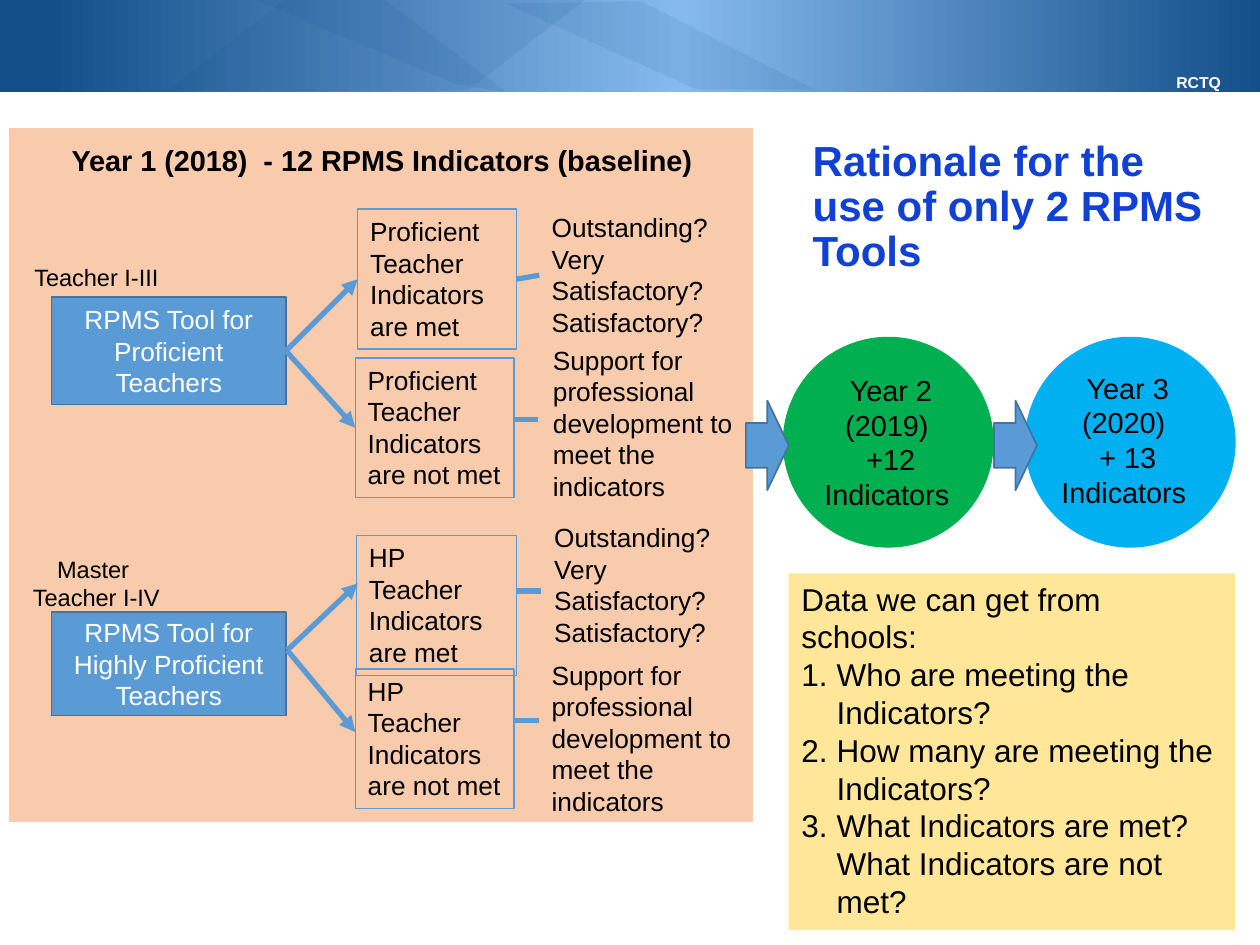
import copy

import pptx
import pptx.util
import pptx.dml.color
import pptx.enum.shapes
import pptx.enum.text
import pptx.oxml
import pptx.oxml.ns

Inches = pptx.util.Inches
Pt = pptx.util.Pt
RGB = pptx.dml.color.RGBColor.from_string
SHAPE = pptx.enum.shapes.MSO_SHAPE
ALIGN = pptx.enum.text.PP_ALIGN
ANCHOR = pptx.enum.text.MSO_ANCHOR
qn = pptx.oxml.ns.qn


class Theme:
    font = "Arial"
    black, white = "000000", "FFFFFF"
    navy, sky = "144F8A", "86BAEE"
    blue, edge = "5B9BD5", "43739E"
    peach, yellow = "F8CBAD", "FFE699"
    green, cyan = "00B050", "00B0F0"
    title = "1040D4"
    tag_size, label_size, box_size = 9, 13.5, 15
    year_size, list_size, title_size = 16.5, 18, 24


def write(sp, *lines, size=Theme.box_size, color=Theme.black, bold=False,
          align=ALIGN.LEFT, anchor=ANCHOR.TOP, spacing=1.0, numbered=False):
    """Fill a shape with paragraphs; numbered counts every line but the first."""
    tf = sp.text_frame
    tf.word_wrap = True
    tf.auto_size = pptx.enum.text.MSO_AUTO_SIZE.NONE
    tf.vertical_anchor = anchor
    for i, line in enumerate(lines):
        p = tf.paragraphs[0] if i == 0 else tf.add_paragraph()
        p.alignment = align
        p.line_spacing = spacing
        p.space_before = p.space_after = Pt(0)
        if numbered:
            pPr = p._p.get_or_add_pPr()
            indent = Inches(0.28) if i else 0
            pPr.set("marL", str(indent))
            pPr.set("indent", str(-indent))
            if i:
                bullet = pPr.makeelement(qn("a:buAutoNum"), {"type": "arabicPeriod"})
            else:
                bullet = pPr.makeelement(qn("a:buNone"), {})
            pPr.append(bullet)
        r = p.add_run()
        r.text = line
        r.font.name = Theme.font
        r.font.size = Pt(size)
        r.font.bold = bold
        r.font.color.rgb = RGB(color)


def paint(sp, fill=None, line=None, width=1):
    """Set fill and outline of a shape; None leaves that part empty."""
    sp.shadow.inherit = False
    if fill:
        sp.fill.solid()
        sp.fill.fore_color.rgb = RGB(fill)
    else:
        sp.fill.background()
    if line:
        sp.line.color.rgb = RGB(line)
        sp.line.width = Pt(width)
    else:
        sp.line.fill.background()


prs = pptx.Presentation()
prs.slide_width, prs.slide_height = Inches(10), Inches(7.5)
s = prs.slides.add_slide(prs.slide_layouts[1])
shapes = s.shapes

# Title
title = shapes.title
title.left, title.top, title.width, title.height = map(Inches, (6.35, 1.06, 3.36, 1.23))
write(title, "Rationale for the use of only 2 RPMS Tools", size=Theme.title_size,
      color=Theme.title, bold=True, spacing=0.9)

# Numbered list of available data
body = s.placeholders[1]
body.left, body.top, body.width, body.height = map(Inches, (6.26, 4.55, 3.54, 2.83))
paint(body, Theme.yellow)
write(body, "Data we can get from schools:", "Who are meeting the Indicators?",
      "How many are meeting the Indicators?",
      "What Indicators are met? What Indicators are not met?",
      size=Theme.list_size, numbered=True)

# Banner with a three-stop gradient
banner = shapes.add_shape(SHAPE.RECTANGLE, 0, 0, Inches(10), Inches(0.73))
paint(banner, Theme.navy)
banner.fill.gradient()
banner.fill.gradient_angle = 0
stop_list = banner._element.spPr.find(qn("a:gradFill")).find(qn("a:gsLst"))
stop_list.insert(1, copy.deepcopy(stop_list[0]))
stops = ((0.04, Theme.navy), (0.54, Theme.sky), (1, Theme.navy))
for stop, (position, color) in zip(banner.fill.gradient_stops, stops):
    stop.position = position
    stop.color.rgb = RGB(color)

# Translucent banner facets
slant = shapes.add_shape(SHAPE.PARALLELOGRAM, Inches(1.33), 0, Inches(3.31), Inches(0.72))
slant.adjustments[0] = 1.29
facets = [slant]
for corners in (
    ((4.02, 0.03), (5.09, 0.01), (6.46, 0.71), (5.53, 0.71)),
    ((2.03, 0), (3.05, 0), (4.02, 0.73), (3.62, 0.67)),
):
    points = [(Inches(x), Inches(y)) for x, y in corners]
    builder = shapes.build_freeform(*points[0])
    builder.add_line_segments(points[1:], close=True)
    facets.append(builder.convert_to_shape())
for facet in facets:
    paint(facet, Theme.navy)
    color = facet._element.spPr.find(qn("a:solidFill"))[0]
    color.append(color.makeelement(qn("a:alpha"), {"val": "10000"}))

tag = shapes.add_textbox(Inches(9.04), Inches(0.53), Inches(0.98), Inches(0.25))
write(tag, "RCTQ ", size=Theme.tag_size, color=Theme.white, bold=True, align=ALIGN.CENTER)

# Year 1 panel
panel = shapes.add_shape(SHAPE.RECTANGLE, *map(Inches, (0.08, 1.02, 5.89, 5.5)))
paint(panel, Theme.peach, Theme.peach)
heading = shapes.add_textbox(*map(Inches, (0.47, 1.08, 5.14, 0.38)))
write(heading, "Year 1 (2018)  - 12 RPMS Indicators (baseline)",
      size=Theme.year_size, bold=True)

# Teacher groups and their tools
tools = []
for lines, label_top, tool, top, height in (
    (("Teacher I-III",), 1.97, "RPMS Tool for Proficient Teachers", 2.36, 0.85),
    (("Master ", "Teacher I-IV"), 4.4, "RPMS Tool for Highly Proficient Teachers", 4.86, 0.82),
):
    label = shapes.add_textbox(*map(Inches, (0.08, label_top, 1.37, 0.46)))
    write(label, *lines, size=Theme.label_size, align=ALIGN.CENTER, anchor=ANCHOR.MIDDLE)
    sp = shapes.add_shape(SHAPE.RECTANGLE, *map(Inches, (0.41, top, 1.86, height)))
    paint(sp, Theme.blue, Theme.edge)
    write(sp, tool, color=Theme.white, align=ALIGN.CENTER, anchor=ANCHOR.MIDDLE)
    tools.append(sp)

# Indicator boxes and the outcome beside each
met = "Outstanding? Very Satisfactory? Satisfactory?"
not_met = "Support for professional development to meet the indicators"
boxes, outcomes = [], []
for text, box_at, outcome, outcome_at in (
    ("Proficient Teacher Indicators are met", (2.84, 1.66, 1.26, 1.11),
     met, (4.28, 1.63, 1.61, 1.11)),
    ("Proficient Teacher Indicators are not met", (2.82, 2.84, 1.26, 1.11),
     not_met, (4.29, 2.68, 1.84, 1.36)),
    ("HP Teacher Indicators are met", (2.83, 4.25, 1.27, 1.11),
     met, (4.3, 4.09, 1.61, 1.11)),
    ("HP Teacher Indicators are not met", (2.82, 5.31, 1.26, 1.11),
     not_met, (4.28, 5.18, 1.84, 1.36)),
):
    box = shapes.add_shape(SHAPE.RECTANGLE, *map(Inches, box_at))
    paint(box, None, Theme.blue, 0.75)
    write(box, text)
    boxes.append(box)
    note = shapes.add_textbox(*map(Inches, outcome_at))
    write(note, outcome)
    outcomes.append(note)

# Year 2 and Year 3 circles
for left, color, text_left, text_top, lines in (
    (6.22, Theme.green, 6.31, 2.91, ("Year 2 (2019) ", "+12 Indicators ")),
    (8.14, Theme.cyan, 8.19, 2.89, ("Year 3 (2020) ", "+ 13 Indicators ")),
):
    circle = shapes.add_shape(SHAPE.OVAL, *map(Inches, (left, 2.68, 1.66, 1.66)))
    paint(circle, color, color)
    caption = shapes.add_textbox(*map(Inches, (text_left, text_top, 1.52, 1.21)))
    write(caption, *lines, size=Theme.year_size, align=ALIGN.CENTER)

# Block arrows between the years
for left in (5.92, 7.89):
    arrow = shapes.add_shape(SHAPE.RIGHT_ARROW, *map(Inches, (left, 3.18, 0.34, 0.71)))
    paint(arrow, Theme.blue, Theme.edge)

# Connectors: start, end, joined shapes, arrowhead
for x1, y1, x2, y2, source, target, head in (
    (2.27, 2.78, 2.84, 2.21, tools[0], boxes[0], True),
    (2.27, 2.78, 2.82, 3.39, tools[0], boxes[1], True),
    (2.28, 5.16, 2.84, 4.63, None, None, True),
    (2.28, 5.16, 2.82, 5.81, None, None, True),
    (4.1, 2.21, 4.28, 2.19, boxes[0], outcomes[0], False),
    (4.08, 3.33, 4.27, 3.33, None, None, False),
    (4.1, 4.69, 4.29, 4.69, None, None, False),
    (4.09, 5.72, 4.28, 5.72, None, None, False),
):
    link = shapes.add_connector(pptx.enum.shapes.MSO_CONNECTOR.STRAIGHT,
                                *map(Inches, (x1, y1, x2, y2)))
    if source:
        link.begin_connect(source, 3)
        link.end_connect(target, 1)
    link.line.color.rgb = RGB(Theme.blue)
    link.line.width = Pt(3)
    spPr = link._element.spPr
    if head:
        ln = spPr.find(qn("a:ln"))
        ln.append(ln.makeelement(qn("a:tailEnd"), {"type": "triangle"}))
    spPr.append(spPr.makeelement(qn("a:effectLst"), {}))

prs.save("out.pptx")
